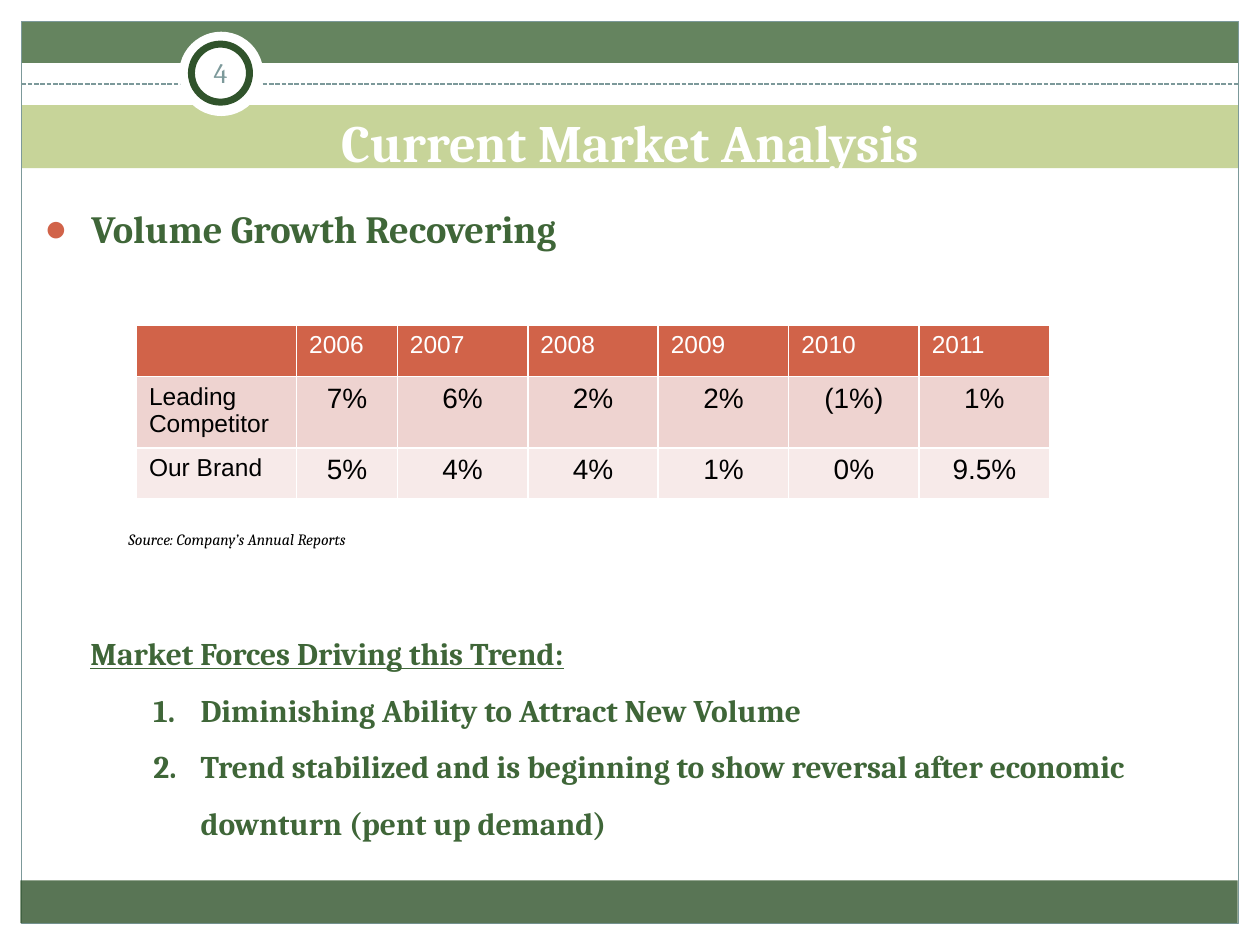
from lxml import etree
from pptx import Presentation
from pptx import util as u
from pptx.dml.color import RGBColor
from pptx.enum import dml, shapes, text
from pptx.oxml.ns import qn

COLORS = {
    "white": "FFFFFF", "black": "000000", "green": "3F6638", "dark": "30532B",
    "lime": "B5C678", "slate": "7C999A", "rust": "D16349",
    "row_odd": "EED3D0", "row_even": "F7EAE9",
}
SERIF, SANS = "Cambria", "Arial"
CENTER, LEFT = text.PP_ALIGN.CENTER, text.PP_ALIGN.LEFT


class Deck:
    """Holds the style and the current slide."""

    def __init__(self, prs, layout):
        self.s = prs.slides.add_slide(prs.slide_layouts[layout])

    def color(self, name):
        return RGBColor.from_string(COLORS[name])

    def place(self, sp, box):
        sp.left, sp.top, sp.width, sp.height = (u.Cm(v) for v in box)

    def shape(self, kind, box, fill=None, alpha=100, line=None, weight=0.75):
        sp = self.s.shapes.add_shape(kind, *(u.Cm(v) for v in box))
        sp.shadow.inherit = False
        if fill:
            sp.fill.solid()
            sp.fill.fore_color.rgb = self.color(fill)
            if alpha < 100:
                clr = sp.fill._xPr.find(".//" + qn("a:srgbClr"))
                etree.SubElement(clr, qn("a:alpha"), val=str(alpha * 1000))
        else:
            sp.fill.background()
        if line:
            sp.line.color.rgb = self.color(line)
            sp.line.width = u.Pt(weight)
        else:
            sp.line.fill.background()

    def dashed_line(self, x1, x2, y):
        cn = self.s.shapes.add_connector(
            shapes.MSO_CONNECTOR.STRAIGHT, u.Cm(x1), u.Cm(y), u.Cm(x2), u.Cm(y))
        cn.line.color.rgb = self.color("slate")
        cn.line.width = u.Pt(0.9)
        cn.line.dash_style = dml.MSO_LINE.SQUARE_DOT
        etree.SubElement(cn._element.spPr, qn("a:effectLst"))

    def run(self, p, words, size, color, font=SERIF, bold=False, italic=False,
            underline=False):
        r = p.add_run()
        r.text = words
        f = r.font
        f.name, f.size, f.color.rgb = font, u.Pt(size), self.color(color)
        f.bold, f.italic, f.underline = bold, italic, underline

    def paragraph(self, tf, first, align=LEFT, spacing=1.0):
        p = tf.paragraphs[0] if first else tf.add_paragraph()
        p.alignment, p.line_spacing, p.space_before = align, spacing, u.Pt(0)
        return p

    def bullet(self, p, tag, margin=0, hanging=0, color=None, **attrs):
        pPr = p._p.get_or_add_pPr()
        pPr.set("marL", str(u.Cm(margin)))
        pPr.set("indent", str(-u.Cm(hanging)))
        if color:
            clr = etree.SubElement(pPr, qn("a:buClr"))
            etree.SubElement(clr, qn("a:srgbClr"), val=COLORS[color])
        etree.SubElement(pPr, qn(tag), **attrs)

    def placeholder(self, idx, box, anchor=text.MSO_ANCHOR.TOP):
        """Move a placeholder, bring it to the front and return its frame."""
        sp = self.s.placeholders[idx]
        self.place(sp, box)
        self.s.shapes._spTree.append(sp._element)
        tf = sp.text_frame
        tf.word_wrap, tf.auto_size = True, text.MSO_AUTO_SIZE.NONE
        tf.vertical_anchor = anchor
        return tf

    def label(self, box, words, size, color, align=LEFT, spacing=1.0,
              anchor=text.MSO_ANCHOR.TOP, inset=None, **style):
        tf = self.s.shapes.add_textbox(*(u.Cm(v) for v in box)).text_frame
        tf.word_wrap, tf.vertical_anchor = True, anchor
        if inset is not None:
            tf.margin_left = tf.margin_right = u.Cm(inset)
            tf.margin_top = tf.margin_bottom = u.Cm(inset)
        p = self.paragraph(tf, True, align, spacing)
        self.run(p, words, size, color, **style)

    def table(self, left, top, widths, row_height, rows, fills):
        box = (left, top, sum(widths), row_height * len(rows))
        tbl = self.s.shapes.add_table(
            len(rows), len(widths), *(u.Cm(v) for v in box)).table
        for col, width in zip(tbl.columns, widths):
            col.width = u.Cm(width)
        for i, (values, fill) in enumerate(zip(rows, fills)):
            for j, value in enumerate(values):
                cell = tbl.cell(i, j)
                cell.fill.solid()
                cell.fill.fore_color.rgb = self.color(fill)
                if not value:
                    continue
                is_value = i > 0 and j > 0
                p = self.paragraph(cell.text_frame, True,
                                   CENTER if is_value else LEFT)
                self.run(p, value, 16 if is_value else 14,
                         "black" if i else "white", SANS)


def main():
    prs = Presentation()
    prs.slide_width, prs.slide_height = u.Cm(25.4), u.Cm(19.05)
    deck = Deck(prs, 3)
    rect, oval = shapes.MSO_SHAPE.RECTANGLE, shapes.MSO_SHAPE.OVAL

    # Frame and bands
    deck.shape(rect, (0.43, 0.43, 24.54, 0.84), "green", 80)
    deck.shape(rect, (0.43, 2.12, 24.54, 1.27), "lime", 75)
    deck.shape(rect, (0.43, 0.43, 24.54, 18.19), line="slate")
    deck.dashed_line(0.43, 24.97, 1.69)
    deck.shape(oval, (3.61, 0.64, 1.7, 1.7), "white")
    deck.shape(oval, (3.86, 0.89, 1.17, 1.17), "white", line="dark", weight=4)
    deck.shape(rect, (0.41, 17.75, 24.54, 0.86), "dark", 80)
    deck.label((3.81, 0.84, 1.27, 1.22), "4", 16, "slate", CENTER,
               anchor=text.MSO_ANCHOR.MIDDLE, inset=0.13)

    # Title and heading
    tf = deck.placeholder(0, (0.43, 2.34, 24.56, 1.27), text.MSO_ANCHOR.BOTTOM)
    deck.run(deck.paragraph(tf, True, CENTER), "Current Market Analysis",
             30, "white", bold=True)
    tf = deck.placeholder(1, (0.64, 4.01, 24.13, 1.19))
    p = deck.paragraph(tf, True)
    deck.bullet(p, "a:buChar", 0.95, 0.95, "rust", char="●")
    deck.run(p, "Volume Growth Recovering", 22, "green", bold=True)

    # Growth table
    deck.label((2.34, 10.36, 12.07, 0.76), "Source: Company’s Annual Reports",
               9, "black", spacing=1.5, italic=True)
    growth = [
        ["", "2006", "2007", "2008", "2009", "2010", "2011"],
        ["Leading Competitor", "7%", "6%", "2%", "2%", "(1%)", "1%"],
        ["Our Brand", "5%", "4%", "4%", "1%", "0%", "9.5%"],
    ]
    deck.table(2.75, 6.56, [3.23, 2.03] + [2.63] * 5, 1.03, growth,
               ["rust", "row_odd", "row_even"])

    # Market forces
    tf = deck.placeholder(2, (1.57, 12.27, 22.23, 4.88))
    p = deck.paragraph(tf, True, spacing=1.5)
    deck.bullet(p, "a:buNone")
    deck.run(p, "Market Forces Driving this Trend:", 18, "green", bold=True,
             underline=True)
    for force in (
        "Diminishing Ability to Attract New Volume",
        "Trend stabilized and is beginning to show reversal after economic "
        "downturn (pent up demand)",
    ):
        p = deck.paragraph(tf, False, spacing=1.5)
        p.level = 1
        deck.bullet(p, "a:buAutoNum", 2.22, 0.95, type="arabicPeriod")
        deck.run(p, force, 18, "green", bold=True)

    prs.save("out.pptx")


if __name__ == "__main__":
    main()
